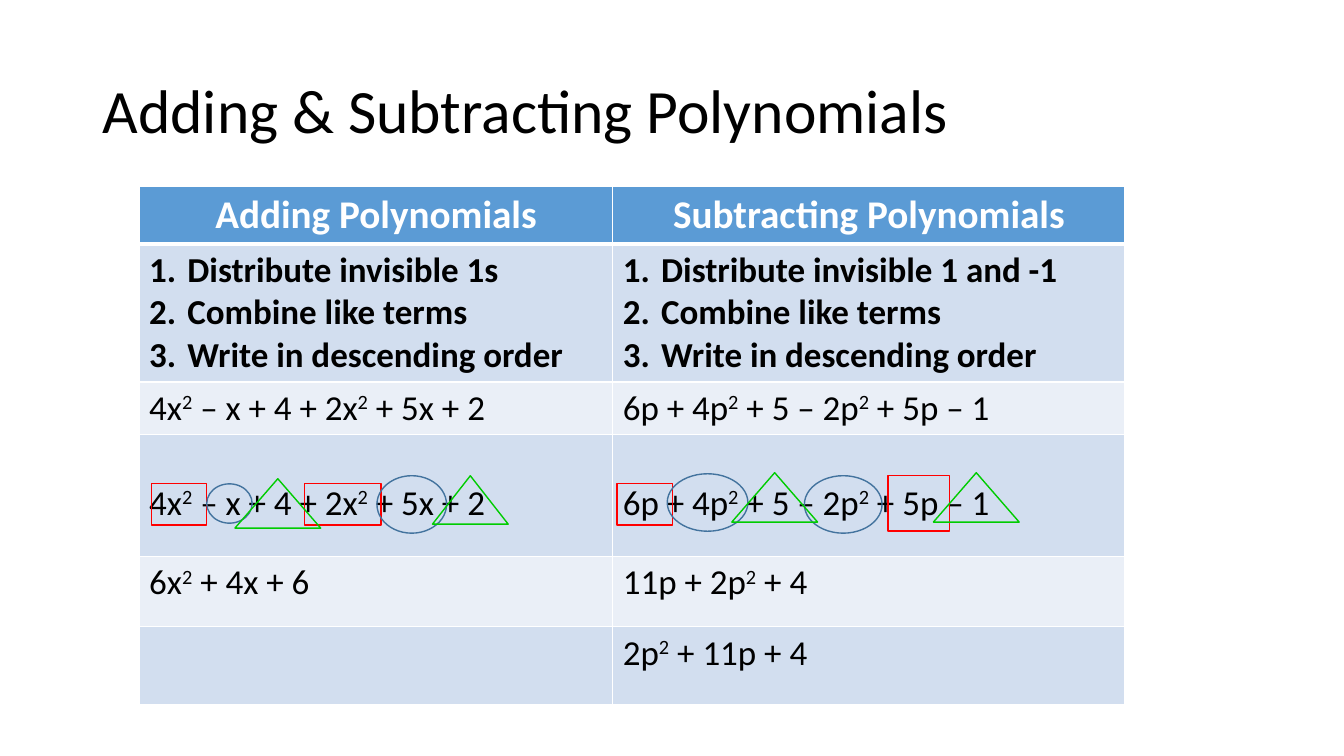
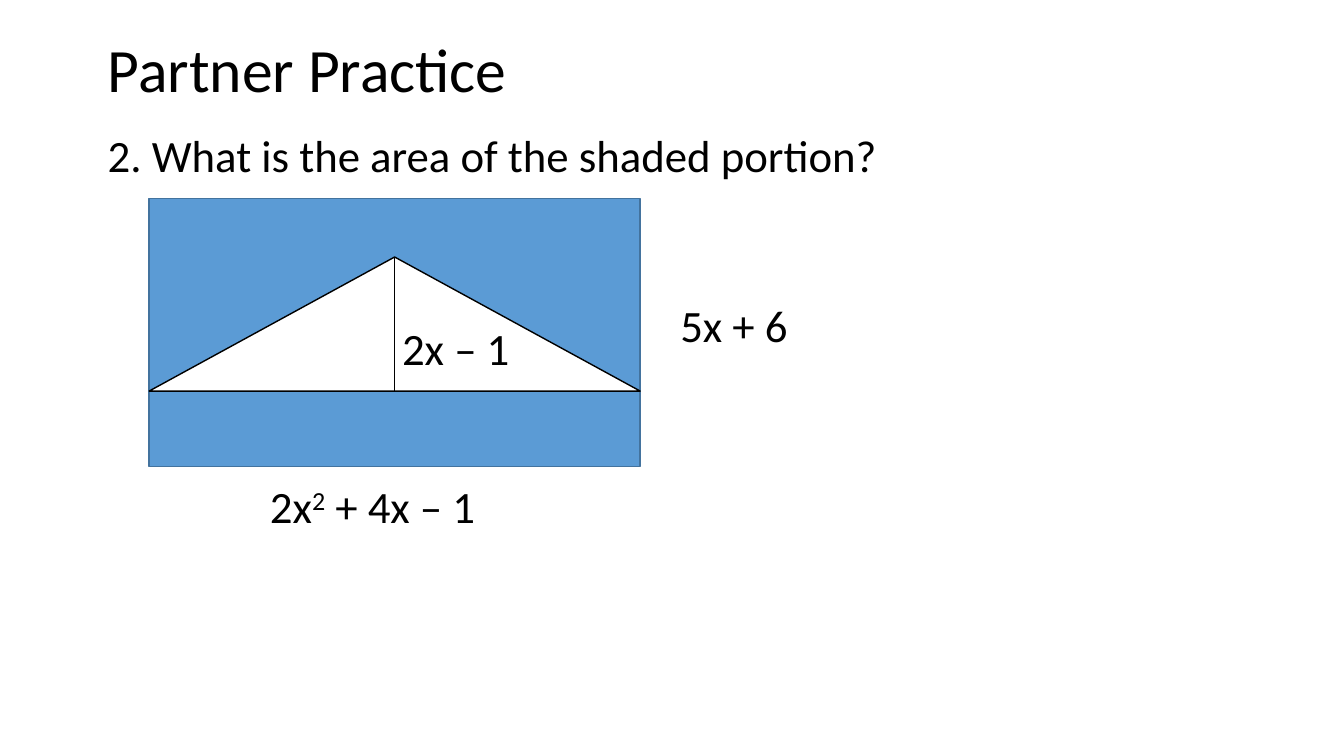
from lxml.etree import SubElement
from pptx import Presentation
from pptx.dml.color import RGBColor
from pptx.enum.shapes import MSO_CONNECTOR, MSO_SHAPE
from pptx.enum.text import MSO_ANCHOR, PP_ALIGN
from pptx.oxml.ns import qn
from pptx.util import Inches, Pt

SLIDE_WIDTH, SLIDE_HEIGHT = Inches(13.333), Inches(7.5)
FONT = "Calibri"
BLACK = RGBColor(0x00, 0x00, 0x00)
WHITE = RGBColor(0xFF, 0xFF, 0xFF)
BLUE = RGBColor(0x5B, 0x9B, 0xD5)
DARK_BLUE = RGBColor(0x43, 0x73, 0x9E)
BAND_DARK = RGBColor(0xD2, 0xDE, 0xEF)
BAND_LIGHT = RGBColor(0xEA, 0xEF, 0xF7)
RED = RGBColor(0xFF, 0x00, 0x00)
GREEN = RGBColor(0x00, 0xCC, 0x00)

# Table content: one tuple per row, "²" becomes a superscript 2
HEADINGS = ("Adding Polynomials", "Subtracting Polynomials")
COMMON_STEPS = ["Combine like terms", "Write in descending order"]
STEPS = (["Distribute invisible 1s"] + COMMON_STEPS,
         ["Distribute invisible 1 and -1"] + COMMON_STEPS)
PROBLEMS = ("4x² – x + 4 + 2x² + 5x + 2", "6p + 4p² + 5 – 2p² + 5p – 1")
COMBINED = ("6x² + 4x + 6", "11p + 2p² + 4")
ORDERED = ("", "2p² + 11p + 4")
COLUMN_SHARES = (35.25, 38.1)
ROW_SHARES = (7.6, 18.27, 6.93, 16.13, 9.33, 10.27)

# Marks around like terms: left, top, width, height in percent of the slide
TERM_MARKS = (
    (MSO_SHAPE.RECTANGLE, RED, (
        (11.25, 64, 4.13, 5.47), (22.65, 64, 5.7, 5.47),
        (66.08, 62.93, 4.58, 7.33), (45.9, 64, 4.13, 5.47))),
    (MSO_SHAPE.OVAL, DARK_BLUE, (
        (15.38, 64, 3.38, 5.2), (28.05, 62.93, 5.18, 7.6),
        (59.85, 62.93, 5.78, 7.6), (49.65, 62.67, 6, 7.6))),
    (MSO_SHAPE.ISOSCELES_TRIANGLE, GREEN, (
        (17.48, 63.33, 6.38, 6.53), (32.18, 62.93, 5.63, 6.4),
        (69.45, 62.53, 6.38, 6.53), (54.45, 62.53, 6.38, 6.53))),
)


def across(percent):
    return round(SLIDE_WIDTH * percent / 100)


def down(percent):
    return round(SLIDE_HEIGHT * percent / 100)


def box(left, top, width, height):
    return across(left), down(top), across(width), down(height)


def write(paragraph, text, size, color=BLACK, bold=False):
    font = paragraph.font
    font.name, font.size, font.bold = FONT, Pt(size), bold
    font.color.rgb = color
    for index, piece in enumerate(text.split("²")):
        if index:
            exponent = paragraph.add_run()
            exponent.text = "2"
            exponent._r.get_or_add_rPr().set("baseline", "30000")
        if piece:
            paragraph.add_run().text = piece


def add_text(shapes, area, text, size, anchor=MSO_ANCHOR.TOP, line_spacing=None):
    frame = shapes.add_textbox(*box(*area)).text_frame
    frame.word_wrap = True
    frame.vertical_anchor = anchor
    paragraph = frame.paragraphs[0]
    paragraph.line_spacing = line_spacing
    write(paragraph, text, size)


def add_title(slide, left, top, text):
    add_text(slide.shapes, (left, top, 86.25, 19.33), text, 44, MSO_ANCHOR.MIDDLE, 0.9)


def add_figure(shapes, kind, area, line, fill=None):
    shape = shapes.add_shape(kind, *box(*area))
    shape.shadow.inherit = False
    shape.line.color.rgb = line
    shape.line.width = Pt(1)
    if fill is None:
        shape.fill.background()
    else:
        shape.fill.solid()
        shape.fill.fore_color.rgb = fill


def add_line(shapes, x, top, bottom):
    connector = shapes.add_connector(
        MSO_CONNECTOR.STRAIGHT, across(x), down(top), across(x), down(bottom))
    connector.line.color.rgb = BLACK
    connector.line.width = Pt(0.5)
    SubElement(connector._element.spPr, qn("a:effectLst"))


def number(paragraph):
    properties = paragraph._p.get_or_add_pPr()
    indent = Inches(0.38)
    properties.set("marL", str(indent))
    properties.set("indent", str(-indent))
    numbering = SubElement(properties, qn("a:buAutoNum"), type="arabicPeriod")
    properties.insert(0, numbering)


def style_cell(cell, fill, is_heading, below_heading):
    properties = cell._tc.get_or_add_tcPr()
    widths = {"L": 1, "R": 1, "T": 3 if below_heading else 1, "B": 3 if is_heading else 1}
    for side, width in widths.items():
        border = SubElement(properties, qn(f"a:ln{side}"), w=str(Pt(width)))
        solid = SubElement(border, qn("a:solidFill"))
        SubElement(solid, qn("a:srgbClr"), val=str(WHITE))
    cell.fill.solid()
    cell.fill.fore_color.rgb = fill


def fill_cell(cell, content, is_heading):
    if isinstance(content, list):
        frame = cell.text_frame
        for index, step in enumerate(content):
            paragraph = frame.add_paragraph() if index else frame.paragraphs[0]
            number(paragraph)
            write(paragraph, step, 25, bold=True)
        return
    paragraph = cell.text_frame.paragraphs[0]
    if is_heading:
        paragraph.alignment = PP_ALIGN.CENTER
        write(paragraph, content, 28, WHITE, bold=True)
    else:
        write(paragraph, content, 25)


def add_polynomial_table(slide):
    rows = (HEADINGS, STEPS, PROBLEMS, PROBLEMS, COMBINED, ORDERED)
    area = box(10.35, 24.67, sum(COLUMN_SHARES), sum(ROW_SHARES))
    table = slide.shapes.add_table(len(rows), len(HEADINGS), *area).table
    for column, share in zip(table.columns, COLUMN_SHARES):
        column.width = across(share)
    for row, share in zip(table.rows, ROW_SHARES):
        row.height = down(share)
    for row_index, contents in enumerate(rows):
        is_heading = row_index == 0
        fill = BLUE if is_heading else BAND_DARK if row_index % 2 else BAND_LIGHT
        for column_index, content in enumerate(contents):
            cell = table.cell(row_index, column_index)
            style_cell(cell, fill, is_heading, row_index == 1)
            fill_cell(cell, content, is_heading)
    # The marked problems sit one line lower in their row
    for cell in table.rows[3].cells:
        cell.margin_top = Inches(0.47)


def build_polynomials_slide(slide):
    add_title(slide, 6.9, 5.33, "Adding & Subtracting Polynomials")
    add_polynomial_table(slide)
    for kind, color, areas in TERM_MARKS:
        for area in areas:
            add_figure(slide.shapes, kind, area, color)


def build_practice_slide(slide):
    add_title(slide, 7.28, -0.1, "Partner Practice")
    add_text(slide.shapes, (7.28, 17.07, 86.25, 63.47),
             "2. What is the area of the shaded portion?", 32, line_spacing=0.9)

    # Shaded rectangle with a white triangle and its height
    left, width = 11.1, 36.53
    apex, height = 34, 17.73
    diagram = slide.shapes.add_group_shape().shapes
    add_figure(diagram, MSO_SHAPE.RECTANGLE, (left, 26.27, width, 35.47), DARK_BLUE, BLUE)
    add_figure(diagram, MSO_SHAPE.ISOSCELES_TRIANGLE, (left, apex, width, height), BLACK, WHITE)
    add_line(diagram, left + width / 2, apex, apex + height)

    # Lengths
    for label_left, label_top, label_width, text in (
            (49.88, 38.67, 13.73, "5x + 6"),
            (19.35, 62.67, 19.88, "2x² + 4x – 1"),
            (29.18, 41.73, 13.73, "2x – 1")):
        add_text(diagram, (label_left, label_top, label_width, 8.53), text, 32)


def main():
    presentation = Presentation()
    presentation.slide_width, presentation.slide_height = SLIDE_WIDTH, SLIDE_HEIGHT
    blank = presentation.slide_layouts[6]
    for build in (build_polynomials_slide, build_practice_slide):
        build(presentation.slides.add_slide(blank))
    presentation.save("out.pptx")


if __name__ == "__main__":
    main()
